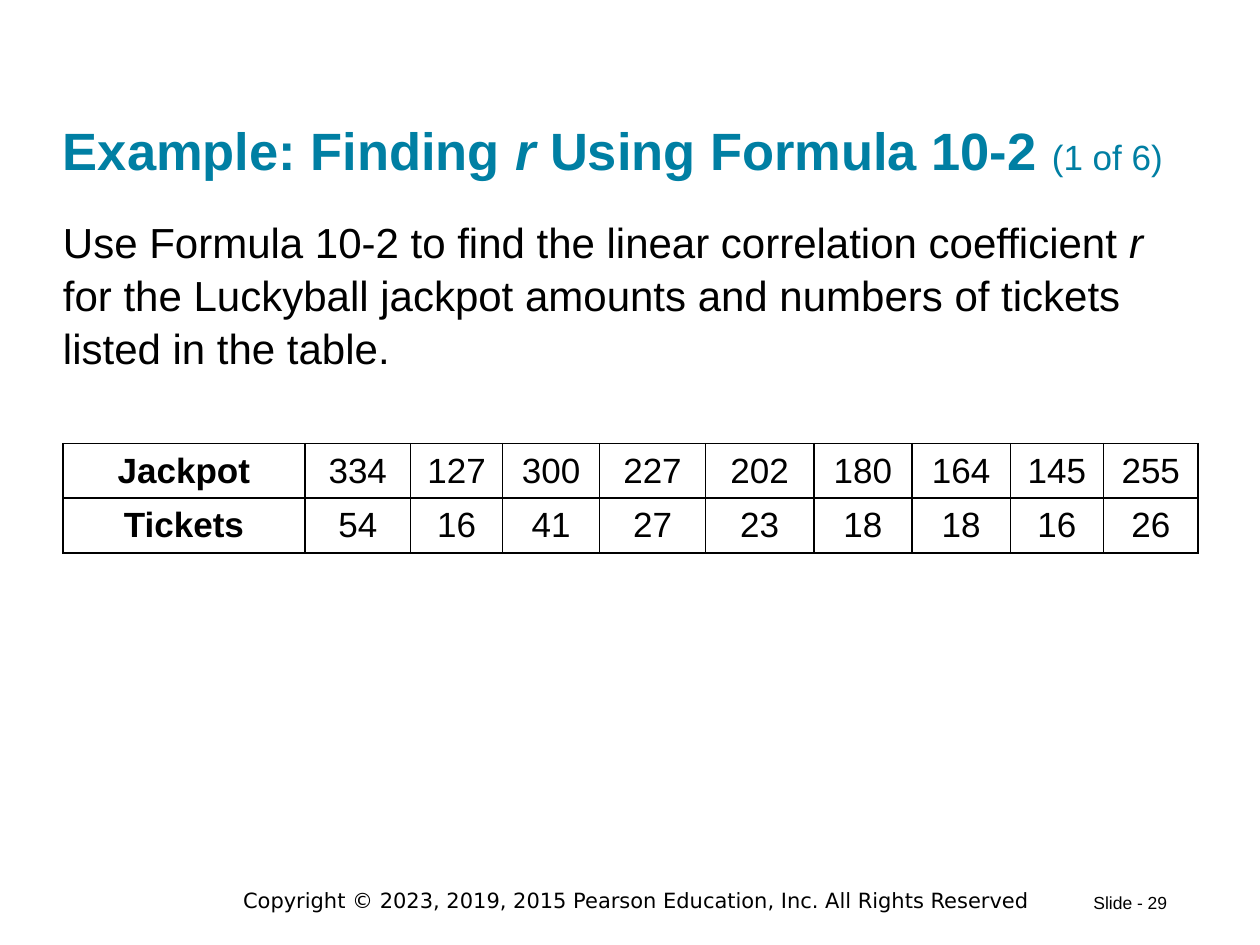
"""Build the slide on finding r from lottery jackpots and ticket numbers."""
from lxml import etree
from pptx import Presentation
from pptx.dml.color import RGBColor
from pptx.enum import text
from pptx.oxml.ns import qn
from pptx.util import Inches, Pt

COLORS = {"title": "007FA3", "ink": "000000"}
TITLE = [
    ("Example: Finding ", {"bold": True}),
    ("r", {"bold": True, "italic": True}),
    (" Using Formula 10-2 ", {"bold": True}),
    ("(1 of 6)", {"size": 20}),
]
BODY = [
    ("Use Formula 10-2 to find the linear correlation coefficient ", {}),
    ("r ", {"italic": True}),
    ("for the Luckyball jackpot amounts and numbers of tickets listed in the table.", {}),
]
COPYRIGHT = [("Copyright © 2023, 2019, 2015 Pearson Education, Inc. All Rights Reserved", {})]
NUMBER = [("Slide - 29", {})]
TABLE = {
    "Jackpot": [334, 127, 300, 227, 202, 180, 164, 145, 255],
    "Tickets": [54, 16, 41, 27, 23, 18, 18, 16, 26],
}
COLUMN_WIDTHS = [1.92, 0.84, 0.73, 0.77, 0.84, 0.86, 0.78, 0.78, 0.74, 0.75]
ROW_HEIGHT = 0.41
LEFT, WIDTH = 0.5, 9


def write(frame, runs, size=20, color="ink", font="Arial", align=None, spacing=None):
    para = frame.paragraphs[0]
    para.alignment = align
    para.line_spacing = spacing
    for words, style in runs:
        span = para.add_run()
        span.text = words
        span.font.name = font
        span.font.size = Pt(style.get("size", size))
        span.font.bold = style.get("bold", False)
        span.font.italic = style.get("italic", False)
        span.font.color.rgb = RGBColor.from_string(COLORS[color])


def add_text(page, area, runs, anchor=text.MSO_ANCHOR.TOP, inset=True, wrap=True, **style):
    box = page.shapes.add_textbox(*map(Inches, area))
    frame = box.text_frame
    frame.word_wrap = wrap
    frame.vertical_anchor = anchor
    if not inset:
        frame.margin_left = frame.margin_right = frame.margin_top = frame.margin_bottom = 0
    write(frame, runs, **style)


def add_borders(cell):
    properties = cell._tc.get_or_add_tcPr()
    for position, side in enumerate(("lnL", "lnR", "lnT", "lnB")):
        line = etree.Element(qn(f"a:{side}"), w=str(Pt(1)))
        fill = etree.SubElement(line, qn("a:solidFill"))
        etree.SubElement(fill, qn("a:srgbClr"), val=COLORS["ink"])
        properties.insert(position, line)


def add_data_table(page, top):
    size = (len(TABLE), len(COLUMN_WIDTHS))
    area = (LEFT, top, WIDTH, ROW_HEIGHT * len(TABLE))
    table = page.shapes.add_table(*size, *map(Inches, area)).table
    table.first_row = table.horz_banding = False
    for column, width in zip(table.columns, COLUMN_WIDTHS):
        column.width = Inches(width)
    for row, (label, values) in zip(table.rows, TABLE.items()):
        row.height = Inches(ROW_HEIGHT)
        for index, (cell, value) in enumerate(zip(row.cells, [label, *values])):
            cell.fill.background()
            cell.vertical_anchor = text.MSO_ANCHOR.MIDDLE
            write(cell.text_frame, [(str(value), {"bold": index == 0})],
                  align=text.PP_ALIGN.CENTER)
            add_borders(cell)


def main():
    deck = Presentation()
    deck.slide_width, deck.slide_height = Inches(10), Inches(7.5)
    page = deck.slides.add_slide(deck.slide_layouts[6])
    add_text(page, (1.76, 7.03, 6.58, 0.22), COPYRIGHT, size=12, font="DejaVu Sans",
             anchor=text.MSO_ANCHOR.MIDDLE, align=text.PP_ALIGN.CENTER)
    add_text(page, (8.58, 7.03, 0.81, 0.27), NUMBER, size=10, wrap=False)
    add_text(page, (LEFT, 0.24, WIDTH, 1.2), TITLE, size=30, color="title",
             anchor=text.MSO_ANCHOR.BOTTOM, inset=False)
    add_text(page, (LEFT, 1.7, WIDTH, 1.28), BODY, size=24, inset=False, spacing=1.05)
    add_data_table(page, 3.52)
    deck.save("out.pptx")


if __name__ == "__main__":
    main()
